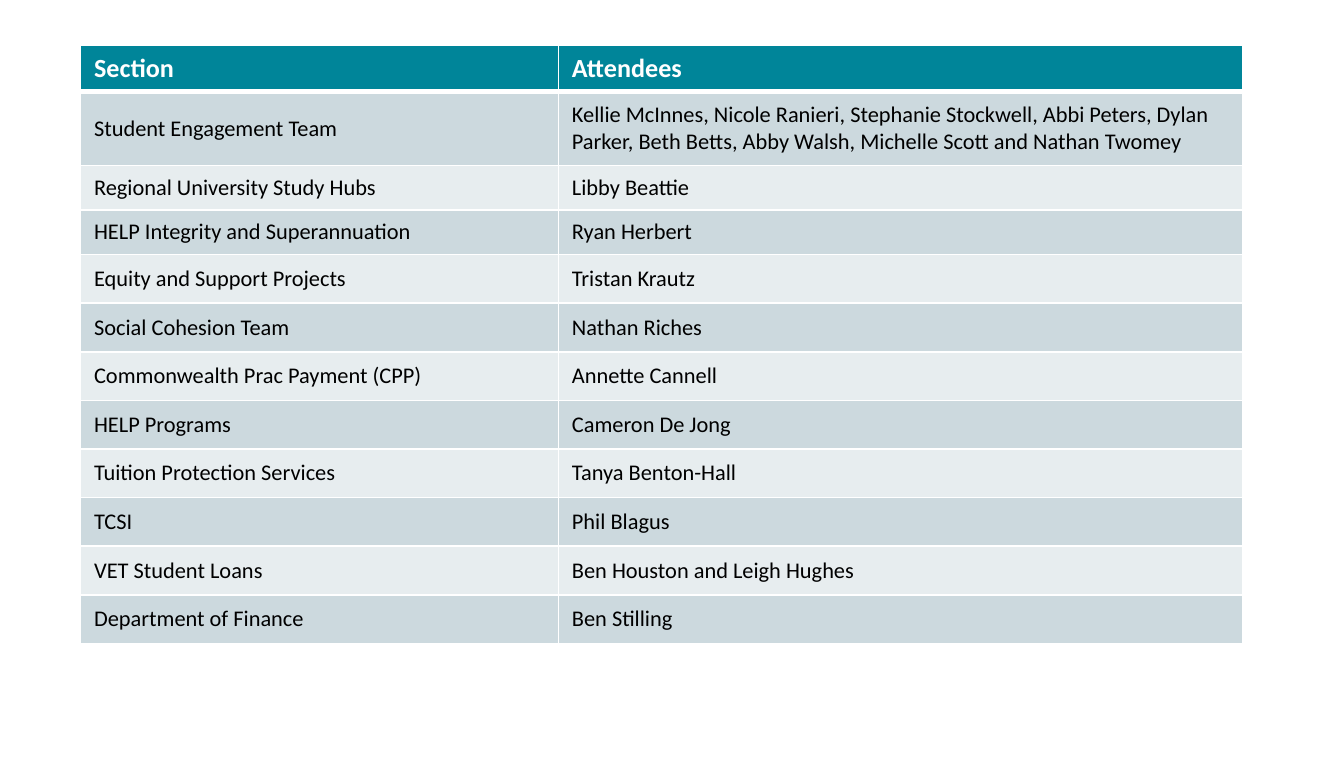
from lxml import etree
from pptx import Presentation, util as u
from pptx.dml.color import RGBColor
from pptx.enum import text
from pptx.oxml import ns

WIDTH, HEIGHT = u.Inches(10), u.Inches(5.63)
COLUMN_WIDTHS = [3.56, 5.1]
ROW_HEIGHTS = [0.34, 0.55] + [0.33] * 2 + [0.36] * 8
BANDS = ["E7EDEF", "CCD9DE"]
HEADER = {"size": u.Pt(14), "bold": True, "name": "Calibri"}
BODY = {"size": u.Pt(12), "bold": False, "name": "Calibri"}
ATTENDANCE = [
    ("Section", "Attendees"),
    ("Student Engagement Team",
     "Kellie McInnes, Nicole Ranieri, Stephanie Stockwell, Abbi Peters, Dylan Parker, "
     "Beth Betts, Abby Walsh, Michelle Scott and Nathan Twomey"),
    ("Regional University Study Hubs", "Libby Beattie"),
    ("HELP Integrity and Superannuation", "Ryan Herbert"),
    ("Equity and Support Projects", "Tristan Krautz"),
    ("Social Cohesion Team", "Nathan Riches"),
    ("Commonwealth Prac Payment (CPP)", "Annette Cannell"),
    ("HELP Programs", "Cameron De Jong"),
    ("Tuition Protection Services", "Tanya Benton-Hall"),
    ("TCSI", "Phil Blagus"),
    ("VET Student Loans", "Ben Houston and Leigh Hughes"),
    ("Department of Finance", "Ben Stilling"),
]


def colour(hex_string):
    """Turn a hex string into a colour."""
    return RGBColor.from_string(hex_string)


def rule_cell(cell, widths):
    """Draw white borders of the given point widths around a cell."""
    properties = cell._tc.get_or_add_tcPr()
    for side in "LRTB":
        border = etree.SubElement(properties, ns.qn(f"a:ln{side}"),
                                  w=str(u.Pt(widths.get(side, 1))))
        fill = etree.SubElement(border, ns.qn("a:solidFill"))
        etree.SubElement(fill, ns.qn("a:srgbClr"), val="FFFFFF")


def fill_cell(cell, wording, row):
    """Write and format one cell according to its row."""
    is_header = row == 0
    rule_cell(cell, {0: {"B": 3}, 1: {"T": 3}}.get(row, {}))
    cell.fill.solid()
    cell.fill.fore_color.rgb = colour("008599" if is_header else BANDS[row % 2])
    cell.vertical_anchor = text.MSO_ANCHOR.TOP if is_header else text.MSO_ANCHOR.MIDDLE
    cell.text = wording
    font = cell.text_frame.paragraphs[0].runs[0].font
    for key, value in (HEADER if is_header else BODY).items():
        setattr(font, key, value)
    font.color.rgb = colour("FFFFFF" if is_header else "000000")


def add_attendance(slide, left, top, width, height):
    """Place the attendance table in the given box."""
    table = slide.shapes.add_table(len(ATTENDANCE), len(COLUMN_WIDTHS),
                                   left, top, width, height).table
    for column, share in zip(table.columns, COLUMN_WIDTHS):
        column.width = int(width * share / sum(COLUMN_WIDTHS))
    for row, share in zip(table.rows, ROW_HEIGHTS):
        row.height = int(height * share / sum(ROW_HEIGHTS))
    for row, entry in enumerate(ATTENDANCE):
        for column, wording in enumerate(entry):
            fill_cell(table.cell(row, column), wording, row)


def main():
    """Build the attendance slide."""
    deck = Presentation()
    deck.slide_width, deck.slide_height = WIDTH, HEIGHT
    slide = deck.slides.add_slide(deck.slide_layouts[6])
    add_attendance(slide, int(WIDTH * 0.06), int(HEIGHT * 0.06),
                   int(WIDTH * 0.865), int(HEIGHT * 0.79))
    deck.save("out.pptx")


if __name__ == "__main__":
    main()
